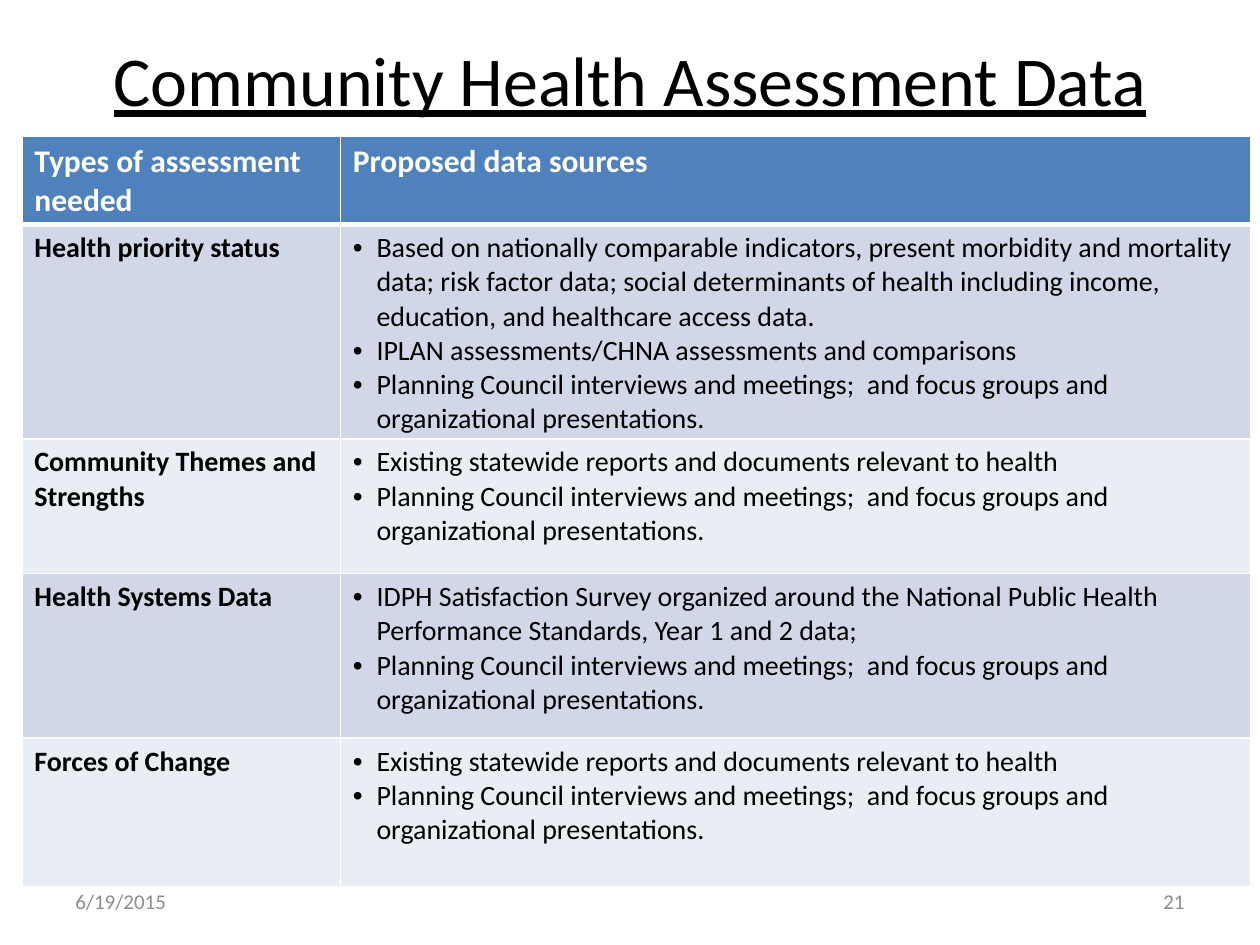
from lxml import etree
from pptx import Presentation
from pptx import util as u
from pptx.dml.color import RGBColor
from pptx.enum import text
from pptx.oxml import ns

Pt = u.Pt
COLORS = {
    "black": "000000", "white": "FFFFFF", "header": "4F81BD",
    "band_dark": "D0D8E8", "band_light": "E9EDF4", "footer": "8C8C8C",
}
COL_WIDTHS = (182, 520)
ROW_HEIGHTS = (46, 112, 77, 94, 85)
INDENT = 13.5

# Table content
HEADER = ("Types of assessment needed", "Proposed data sources")
COUNCIL = ("Planning Council interviews and meetings;  and focus groups "
           "and organizational presentations.")
REPORTS = "Existing statewide reports and documents relevant to health"
ASSESSMENTS = [
    ("Health priority status", [
        "Based on nationally comparable indicators, present morbidity and "
        "mortality data; risk factor data; social determinants of health "
        "including income, education, and healthcare access data.",
        "IPLAN assessments/CHNA assessments and comparisons",
        COUNCIL]),
    ("Community Themes and Strengths", [REPORTS, COUNCIL]),
    ("Health Systems Data", [
        "IDPH Satisfaction Survey organized around the National Public "
        "Health Performance Standards, Year 1 and 2 data;",
        COUNCIL]),
    ("Forces of Change", [REPORTS, COUNCIL]),
]


def rgb(name):
    return RGBColor.from_string(COLORS[name])


def add_run(p, words, color, **formats):
    r = p.add_run()
    r.text = words
    r.font.color.rgb = rgb(color)
    for name, value in {"name": "Calibri", **formats}.items():
        setattr(r.font, name, value)


def add_text(s, box, words, align, color, **formats):
    tf = s.shapes.add_textbox(*map(Pt, box)).text_frame
    tf.word_wrap = True
    tf.vertical_anchor = text.MSO_ANCHOR.MIDDLE
    p = tf.paragraphs[0]
    p.alignment = align
    add_run(p, words, color, **formats)


def add_bullet(p):
    pPr = p._p.get_or_add_pPr()
    pPr.set("marL", str(Pt(INDENT)))
    pPr.set("indent", str(-Pt(INDENT)))
    etree.SubElement(pPr, ns.qn("a:buFont"), typeface="Arial")
    etree.SubElement(pPr, ns.qn("a:buChar"), char="•")


def set_borders(cell, bottom):
    tcPr = cell._tc.get_or_add_tcPr()
    for side, width in {"L": 1, "R": 1, "T": 1, "B": bottom}.items():
        ln = etree.SubElement(tcPr, ns.qn(f"a:ln{side}"), w=str(Pt(width)))
        fill = etree.SubElement(ln, ns.qn("a:solidFill"))
        etree.SubElement(fill, ns.qn("a:srgbClr"), val=COLORS["white"])


def fill_cell(cell, lines, fill, color, bulleted=False, bottom=1, **formats):
    set_borders(cell, bottom)
    cell.fill.solid()
    cell.fill.fore_color.rgb = rgb(fill)
    tf = cell.text_frame
    for i, line in enumerate(lines):
        p = tf.add_paragraph() if i else tf.paragraphs[0]
        if bulleted:
            add_bullet(p)
        add_run(p, line, color, **formats)


def add_assessment_table(s):
    table = s.shapes.add_table(
        len(ROW_HEIGHTS), len(COL_WIDTHS), Pt(12.5), Pt(78),
        Pt(sum(COL_WIDTHS)), Pt(sum(ROW_HEIGHTS))).table
    for column, width in zip(table.columns, COL_WIDTHS):
        column.width = Pt(width)
    for row, height in zip(table.rows, ROW_HEIGHTS):
        row.height = Pt(height)

    for col, words in enumerate(HEADER):
        fill_cell(table.cell(0, col), [words], "header", "white",
                  bottom=3, size=Pt(18), bold=True)
    for row, (kind, sources) in enumerate(ASSESSMENTS, 1):
        band = "band_dark" if row % 2 else "band_light"
        fill_cell(table.cell(row, 0), [kind], band, "black",
                  size=Pt(16), bold=True)
        fill_cell(table.cell(row, 1), sources, band, "black",
                  bulleted=True, size=Pt(16), bold=False)


def main():
    prs = Presentation()
    prs.slide_width, prs.slide_height = Pt(720), Pt(540)
    s = prs.slides.add_slide(prs.slide_layouts[6])

    # Title
    add_text(s, (36, 0, 648, 90), "Community Health Assessment Data",
             text.PP_ALIGN.CENTER, "black", size=Pt(40), underline=True)

    # Assessment types and their sources
    add_assessment_table(s)

    # Date and slide number
    for left, words, align in (
            (36, "6/19/2015", text.PP_ALIGN.LEFT),
            (516, "21", text.PP_ALIGN.RIGHT)):
        add_text(s, (left, 500.5, 168, 28.75), words, align, "footer",
                 size=Pt(12))

    prs.save("out.pptx")


if __name__ == "__main__":
    main()
